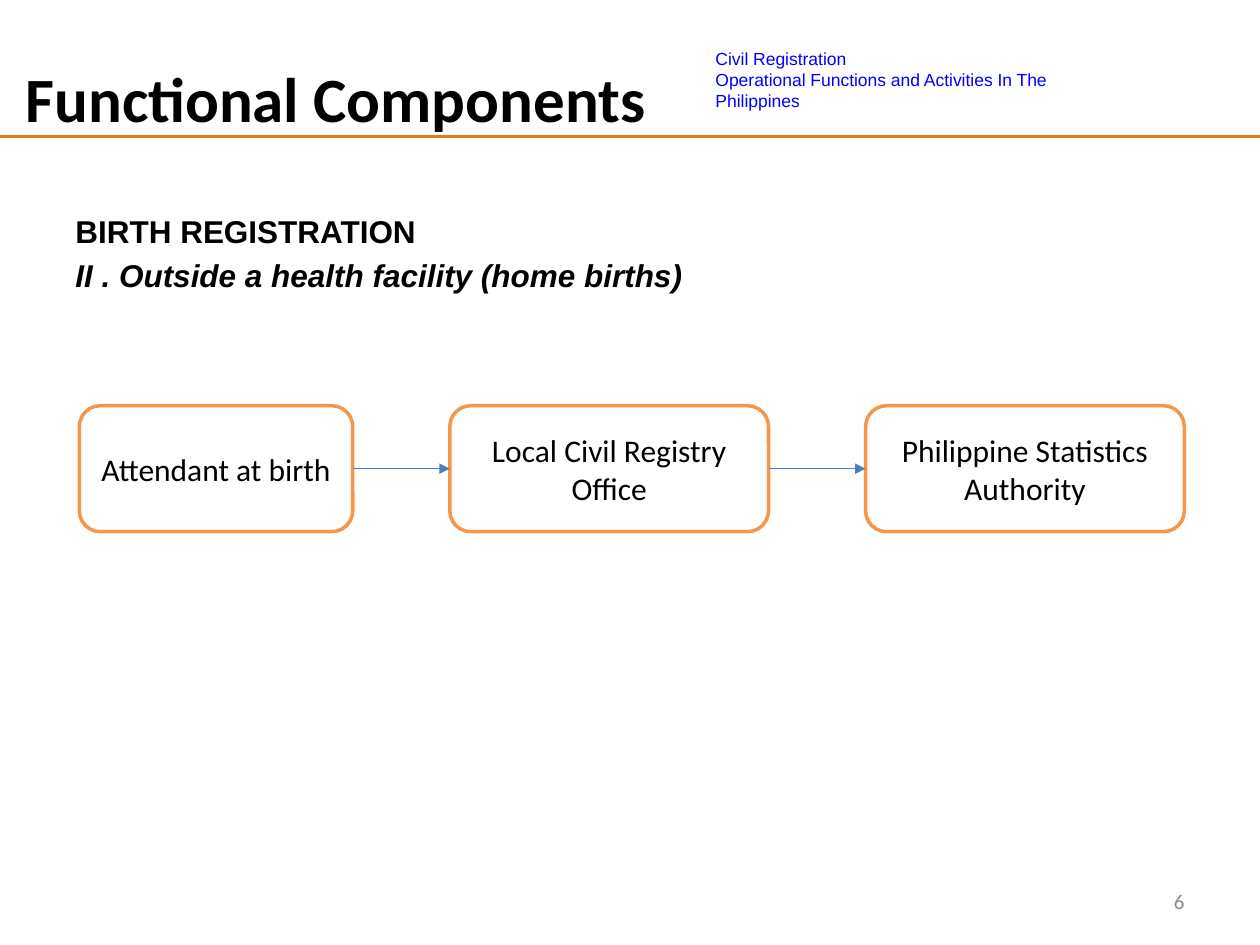
from lxml import etree
from pptx import Presentation
from pptx.dml.color import RGBColor
from pptx.enum.shapes import MSO_CONNECTOR, MSO_SHAPE
from pptx.enum.text import MSO_ANCHOR, PP_ALIGN
from pptx.oxml.ns import qn
from pptx.util import Inches, Pt

STRAIGHT = MSO_CONNECTOR.STRAIGHT
ROUNDED = MSO_SHAPE.ROUNDED_RECTANGLE
TOP, MIDDLE = MSO_ANCHOR.TOP, MSO_ANCHOR.MIDDLE
LEFT, CENTER, RIGHT = PP_ALIGN.LEFT, PP_ALIGN.CENTER, PP_ALIGN.RIGHT

WIDTH, HEIGHT = Inches(10), Inches(7.5)
COL, ROW = WIDTH / 100, HEIGHT / 75

COLORS = {
    "paper": "FFFFFF", "ink": "000000", "rule": "E17B1C", "topic": "0000FF",
    "frame": "F79646", "arrow": "4B7EBC", "number": "8C8C8C",
}
TITLE = {"name": "Calibri", "size": Pt(36), "bold": True}
TOPIC = {"name": "Arial", "size": Pt(10)}
HEADING = {"name": "Arial", "size": Pt(18), "bold": True}
SUBHEADING = {**HEADING, "italic": True}
STEP = {"name": "Calibri", "size": Pt(18)}
NUMBER = {"name": "Calibri", "size": Pt(12)}


def color(key):
    return RGBColor.from_string(COLORS[key])


def place(box):
    left, top, width, height = box
    return round(left * COL), round(top * ROW), round(width * COL), round(height * ROW)


def write(frame, lines, ink="ink", align=LEFT, anchor=TOP, gap=0):
    frame.word_wrap = True
    frame.vertical_anchor = anchor
    for index, (words, style) in enumerate(lines):
        paragraph = frame.add_paragraph() if index else frame.paragraphs[0]
        paragraph.text = words
        paragraph.alignment = align
        if index:
            paragraph.space_before = Pt(gap)
        for run in paragraph.runs:
            run.font.color.rgb = color(ink)
            for attribute, value in style.items():
                setattr(run.font, attribute, value)


def add_text(slide, box, lines, **layout):
    frame = slide.shapes.add_textbox(*place(box)).text_frame
    write(frame, lines, **layout)
    return frame


def add_line(slide, start, end, y, ink, weight, arrow=False):
    left, top, length, _ = place((start, y, end - start, 0))
    line = slide.shapes.add_connector(STRAIGHT, left, top, left + length, top)
    line.line.color.rgb = color(ink)
    line.line.width = Pt(weight)
    if arrow:
        etree.SubElement(line.line._get_or_add_ln(), qn("a:tailEnd"), type="triangle")
    etree.SubElement(line._element.spPr, qn("a:effectLst"))


def add_header(slide, box):
    left, top, width, height = box
    add_line(slide, left, left + width, top + height, "rule", 1.65)
    add_text(slide, (left + 55.8, top + 3.3, 29.2, 6.1),
             [("Civil Registration\vOperational Functions and Activities In The Philippines", TOPIC)],
             ink="topic")
    title = add_text(slide, (left + 0.8, top + 4.2, 51.7, 7.1),
                     [("Functional Components", TITLE)], align=CENTER, anchor=MIDDLE)
    title.margin_left = title.margin_right = 0


def add_headings(slide, box):
    add_text(slide, box, [
        ("BIRTH REGISTRATION", HEADING),
        ("II . Outside a health facility (home births)", SUBHEADING),
    ], gap=4)


def add_flow(slide, box, steps, gap):
    left, top, _, height = box
    for index, (label, width) in enumerate(steps):
        step = slide.shapes.add_shape(ROUNDED, *place((left, top, width, height)))
        step.shadow.inherit = False
        step.fill.solid()
        step.fill.fore_color.rgb = color("paper")
        step.line.color.rgb = color("frame")
        step.line.width = Pt(2)
        write(step.text_frame, [(label, STEP)], align=CENTER, anchor=MIDDLE)
        if index:
            add_line(slide, left - gap, left, top + height / 2, "arrow", 0.75, arrow=True)
        left += width + gap


def add_number(slide, box):
    add_text(slide, box, [("6", NUMBER)], ink="number", align=RIGHT, anchor=MIDDLE)


def main():
    deck = Presentation()
    deck.slide_width, deck.slide_height = WIDTH, HEIGHT
    slide = deck.slides.add_slide(deck.slide_layouts[6])
    add_header(slide, (0, 0, 100, 10.8))
    add_headings(slide, (5, 16.3, 52.5, 7.7))
    add_flow(slide, (6.3, 32.2, 87.7, 10), [
        ("Attendant at birth", 21.7),
        ("Local Civil Registry Office", 25.3),
        ("Philippine Statistics Authority", 25.3),
    ], gap=7.7)
    add_number(slide, (71.7, 69.5, 23.3, 4))
    deck.save("out.pptx")


if __name__ == "__main__":
    main()
